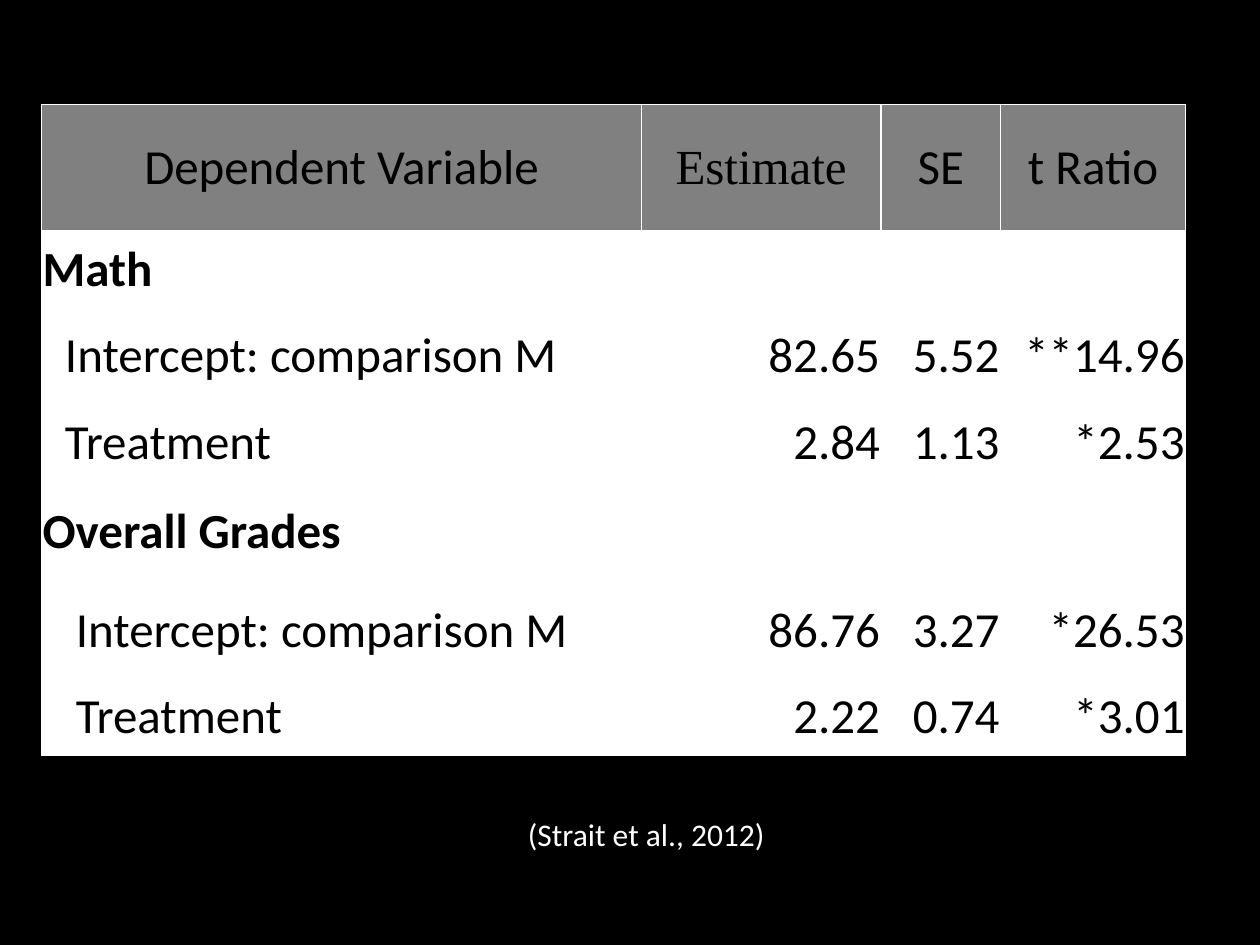
from lxml import etree
from pptx import Presentation, util as u
from pptx.dml.color import RGBColor
from pptx.enum import text
from pptx.oxml.ns import qn

Cm, Pt = u.Cm, u.Pt
LEFT, MID, RIGHT = text.PP_ALIGN.LEFT, text.PP_ALIGN.CENTER, text.PP_ALIGN.RIGHT
HUES = {"back": "000000", "ink": "000000", "paper": "FFFFFF", "note": "FFFFFF"}

COLS = [5.94, 0.66, 1.4, 4.09, 4.83, 2.41, 3.73]
ROWS = [2.54, 1.54, 1.96, 1.54, 2.03, 1.96, 1.54]
HEADS = ["Dependent Variable", "Estimate", "SE", "t Ratio"]
# Label, indent in cm, values, merged (first column, count)
BODY = [
    ("Math", 0, [], [(0, 2), (2, 2)]),
    ("Intercept: comparison M", 0.45, ["82.65", "5.52", "**14.96"], [(0, 4)]),
    ("Treatment", 0.45, ["2.84", "1.13", "*2.53"], [(0, 4)]),
    ("Overall Grades", 0, [], [(0, 3)]),
    ("Intercept: comparison M", 0.67, ["86.76", "3.27", "*26.53"], [(0, 4)]),
    ("Treatment", 0.67, ["2.22", "0.74", "*3.01"], [(1, 3)]),
]


def hue(name):
    return RGBColor.from_string(HUES[name])


def write(frame, words, size, tint, align, font="Calibri", bold=False):
    para = frame.paragraphs[0]
    para.alignment = align
    run = para.add_run()
    run.text = words
    run.font.name, run.font.size, run.font.bold = font, Pt(size), bold
    run.font.color.rgb = hue(tint)
    return para


def style(cell, alpha=None):
    """Fill a cell, set its margins and draw its four borders."""
    cell.margin_left = cell.margin_right = cell.margin_top = Cm(0.02)
    cell.margin_bottom = 0
    cell.vertical_anchor = text.MSO_ANCHOR.MIDDLE
    cell.fill.solid()
    cell.fill.fore_color.rgb = hue("paper")
    props = cell._tc.get_or_add_tcPr()
    if alpha:
        tone = props.find(".//" + qn("a:srgbClr"))
        etree.SubElement(tone, qn("a:alpha"), val=str(alpha * 1000))
    for spot, side in enumerate(["lnL", "lnR", "lnT", "lnB"]):
        line = etree.Element(qn("a:" + side), w=str(Pt(1)))
        fill = etree.SubElement(line, qn("a:solidFill"))
        etree.SubElement(fill, qn("a:srgbClr"), val=HUES["paper"])
        props.insert(spot, line)


def add_grid(slide):
    frame = slide.shapes.add_table(len(ROWS), len(COLS), Cm(0.84), Cm(2.11),
                                   Cm(sum(COLS)), Cm(sum(ROWS)))
    grid = frame.table
    grid.first_row = grid.horz_banding = False
    for col, wide in zip(grid.columns, COLS):
        col.width = Cm(wide)
    for num, (row, high) in enumerate(zip(grid.rows, ROWS)):
        row.height = Cm(high)
        for cell in row.cells:
            style(cell, 50 if num == 0 else None)
    return grid


def merge(grid, row, spans):
    for col, count in spans:
        grid.cell(row, col).merge(grid.cell(row, col + count - 1))


def fill_head(grid):
    merge(grid, 0, [(0, 4)])
    for col, words in zip([0, 4, 5, 6], HEADS):
        font = "Times New Roman" if words == "Estimate" else "Calibri"
        write(grid.cell(0, col).text_frame, words, 28, "ink", MID, font)


def fill_body(grid):
    for row, (label, indent, vals, spans) in enumerate(BODY, 1):
        merge(grid, row, spans)
        para = write(grid.cell(row, 0).text_frame, label, 28, "ink", LEFT,
                     bold=not vals)
        para._p.get_or_add_pPr().set("marL", str(Cm(indent)))
        for col, val in enumerate(vals, 4):
            write(grid.cell(row, col).text_frame, val, 28, "ink", RIGHT)


def add_note(slide, words):
    frame = slide.shapes.add_textbox(Cm(6.78), Cm(16.31), Cm(12.5), Cm(1.02)).text_frame
    frame.word_wrap = True
    write(frame, words, 18, "note", MID)


def main():
    deck = Presentation()
    deck.slide_width, deck.slide_height = Cm(25.4), Cm(19.05)
    slide = deck.slides.add_slide(deck.slide_layouts[6])
    slide.background.fill.solid()
    slide.background.fill.fore_color.rgb = hue("back")

    # Results table
    grid = add_grid(slide)
    fill_head(grid)
    fill_body(grid)

    # Citation
    add_note(slide, "(Strait et al., 2012)")
    deck.save("out.pptx")


if __name__ == "__main__":
    main()
